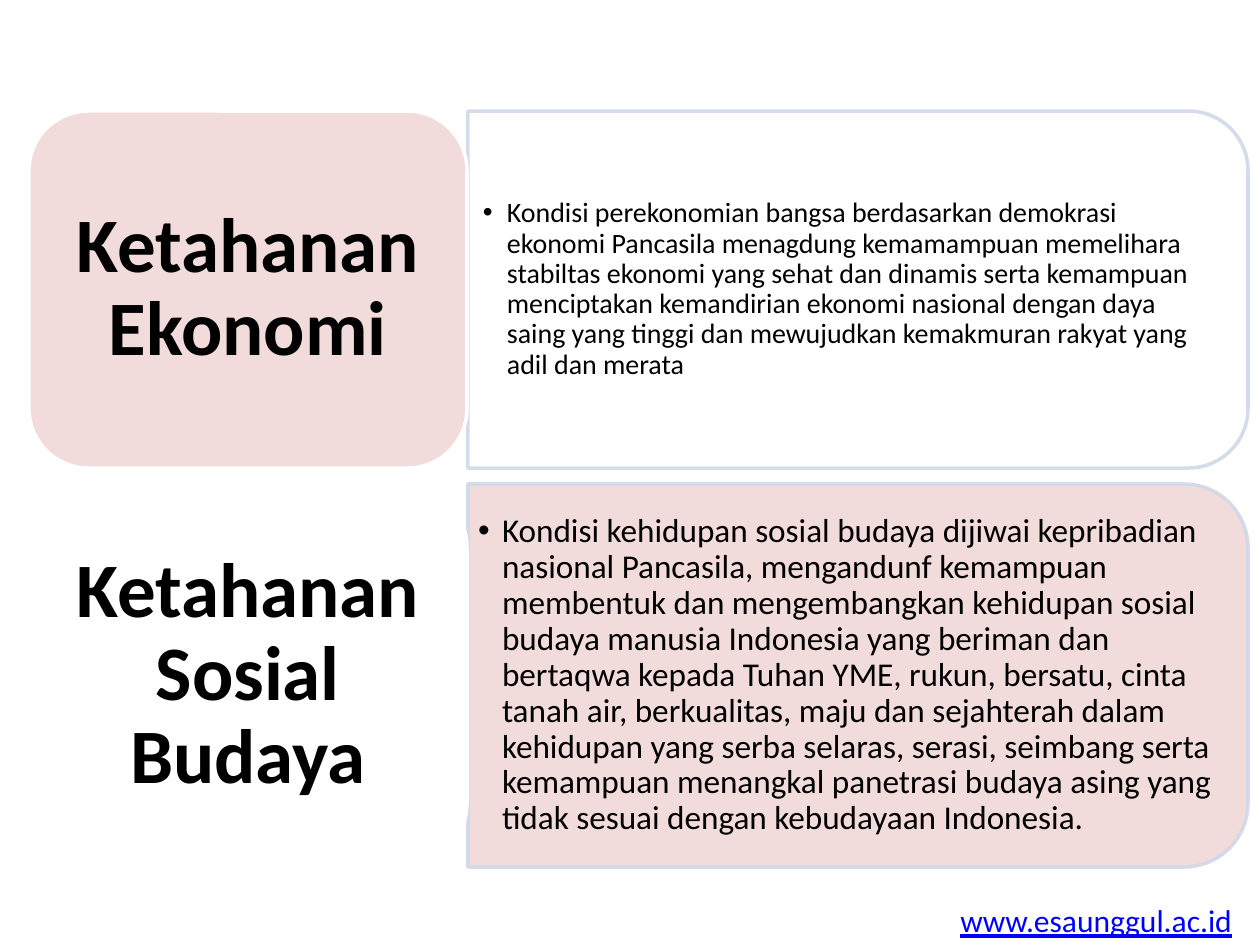
"""Build a slide on economic and socio-cultural resilience."""
from dataclasses import dataclass

from lxml import etree
from pptx import Presentation
from pptx.dml.color import RGBColor
from pptx.enum.shapes import MSO_SHAPE
from pptx.enum.text import MSO_ANCHOR, MSO_AUTO_SIZE, PP_ALIGN
from pptx.oxml.ns import qn
from pptx.util import Pt

ROUNDED = MSO_SHAPE.ROUNDED_RECTANGLE
ROUNDED_TOP = MSO_SHAPE.ROUND_2_SAME_RECTANGLE
MIDDLE = MSO_ANCHOR.MIDDLE
NO_AUTOFIT = MSO_AUTO_SIZE.NONE
LEFT, CENTER = PP_ALIGN.LEFT, PP_ALIGN.CENTER

EMU_PER_PX = 914400 / 126
COMPARISON_LAYOUT = 4
SLIDE_WIDTH, SLIDE_HEIGHT = 1260, 945
LABEL_LEFT, LABEL_WIDTH = 29, 438
PANEL_LEFT, PANEL_WIDTH = 468, 780
PADDING = 18
BULLET_INDENT = 24


@dataclass(frozen=True)
class Theme:
    """Colours, font and type sizes of the slide."""
    white: str = "FFFFFF"
    pink: str = "F2DCDB"
    outline: str = "D0D8E8"
    ink: str = "000000"
    link: str = "0000FF"
    font: str = "Calibri"
    heading_size: int = 44
    link_size: int = 18
    line_width: int = 2
    outline_alpha: int = 90


THEME = Theme()

TOPICS = [
    {
        "heading": "Ketahanan Ekonomi",
        "detail": "Kondisi perekonomian bangsa berdasarkan demokrasi ekonomi "
                  "Pancasila menagdung kemamampuan memelihara stabiltas ekonomi "
                  "yang sehat dan dinamis serta kemampuan menciptakan kemandirian "
                  "ekonomi nasional dengan daya saing yang tinggi dan mewujudkan "
                  "kemakmuran rakyat yang adil dan merata",
        "top": 111, "height": 357, "size": 16, "insets": (15, 8),
        "label_fill": THEME.pink, "panel_fill": THEME.white,
    },
    {
        "heading": "Ketahanan Sosial Budaya",
        "detail": "Kondisi kehidupan sosial budaya dijiwai kepribadian nasional "
                  "Pancasila, mengandunf kemampuan membentuk dan mengembangkan "
                  "kehidupan sosial budaya manusia Indonesia yang beriman dan "
                  "bertaqwa kepada Tuhan YME, rukun, bersatu, cinta tanah air, "
                  "berkualitas, maju dan sejahterah dalam kehidupan yang serba "
                  "selaras, serasi, seimbang serta kemampuan menangkal panetrasi "
                  "budaya asing yang tidak sesuai dengan kebudayaan Indonesia.",
        "top": 484, "height": 383, "size": 19, "insets": (10, 5),
        "label_fill": THEME.white, "panel_fill": THEME.pink,
    },
]


def px(length):
    """Turn pixels into EMU."""
    return round(length * EMU_PER_PX)


def set_attributes(target, values):
    """Set each named attribute of the target."""
    for name, value in values.items():
        setattr(target, name, value)


def format_font(font, color, **values):
    """Apply the theme font, a colour and further values."""
    set_attributes(font, {"name": THEME.font, **values})
    font.color.rgb = RGBColor.from_string(color)


def add_card(slide, kind, box, fill, outline):
    """Add a filled and outlined card without shadow."""
    card = slide.shapes.add_shape(kind, *map(px, box))
    card.shadow.inherit = False
    card.fill.solid()
    card.fill.fore_color.rgb = RGBColor.from_string(fill)
    card.line.color.rgb = RGBColor.from_string(outline)
    card.line.width = Pt(THEME.line_width)
    return card


def add_panel(slide, top, height, fill):
    """Add a panel whose rounded corners point right."""
    left = PANEL_LEFT + (PANEL_WIDTH - height) / 2
    upright_top = top + (height - PANEL_WIDTH) / 2
    panel = add_card(slide, ROUNDED_TOP, (left, upright_top, height, PANEL_WIDTH),
                     fill, THEME.outline)
    panel.rotation = 90
    color = panel.line._get_or_add_ln().find(".//" + qn("a:srgbClr"))
    etree.SubElement(color, qn("a:alpha"), val=str(THEME.outline_alpha * 1000))


def fill_placeholder(slide, index, text, box, insets):
    """Place text in a layout placeholder above the cards."""
    holder = slide.placeholders[index]
    slide.shapes._spTree.append(holder._element)
    set_attributes(holder, dict(zip(("left", "top", "width", "height"), map(px, box))))
    across, down = map(px, insets)
    frame = holder.text_frame
    set_attributes(frame, {
        "text": text, "word_wrap": True, "auto_size": NO_AUTOFIT,
        "vertical_anchor": MIDDLE, "margin_left": across, "margin_right": across,
        "margin_top": down, "margin_bottom": down,
    })
    paragraph = frame.paragraphs[0]
    set_attributes(paragraph, {"line_spacing": 0.9, "space_before": Pt(0)})
    return paragraph


def add_heading(slide, index, text, box):
    """Write a centred bold heading."""
    paragraph = fill_placeholder(slide, index, text, box, (23, 11))
    paragraph.alignment = CENTER
    format_font(paragraph.runs[0].font, THEME.ink, size=Pt(THEME.heading_size), bold=True)


def add_detail(slide, index, text, box, insets, size):
    """Write a bulleted description."""
    paragraph = fill_placeholder(slide, index, text, box, insets)
    paragraph.alignment = LEFT
    properties = paragraph._p.get_or_add_pPr()
    properties.set("marL", str(px(BULLET_INDENT)))
    properties.set("indent", str(-px(BULLET_INDENT)))
    etree.SubElement(properties, qn("a:buChar"), char="•")
    format_font(paragraph.runs[0].font, THEME.ink, size=Pt(size))


def add_topic(slide, number, topic):
    """Add one row of label and panel with their text."""
    top, height = topic["top"], topic["height"]
    text_top, text_height = top + PADDING, height - 2 * PADDING
    add_panel(slide, top, height, topic["panel_fill"])
    add_card(slide, ROUNDED, (LABEL_LEFT, top, LABEL_WIDTH, height),
             topic["label_fill"], THEME.white)
    add_heading(slide, 2 * number + 1, topic["heading"],
                (LABEL_LEFT + PADDING, text_top, LABEL_WIDTH - 2 * PADDING, text_height))
    add_detail(slide, 2 * number + 2, topic["detail"],
               (PANEL_LEFT, text_top, PANEL_WIDTH - PADDING, text_height),
               topic["insets"], topic["size"])


def add_web_address(slide):
    """Add the underlined address at the bottom right."""
    address = slide.shapes.add_textbox(*map(px, (948, 895, 300, 50)))
    address.text_frame.word_wrap = False
    run = address.text_frame.paragraphs[0].add_run()
    run.text = "www.esaunggul.ac.id"
    format_font(run.font, THEME.link, size=Pt(THEME.link_size), underline=True)


def main():
    """Build and save the presentation."""
    presentation = Presentation()
    presentation.slide_width = px(SLIDE_WIDTH)
    presentation.slide_height = px(SLIDE_HEIGHT)
    slide = presentation.slides.add_slide(presentation.slide_layouts[COMPARISON_LAYOUT])
    slide.shapes._spTree.remove(slide.shapes.title._element)
    add_web_address(slide)
    for number, topic in enumerate(TOPICS):
        add_topic(slide, number, topic)
    presentation.save("out.pptx")


if __name__ == "__main__":
    main()
